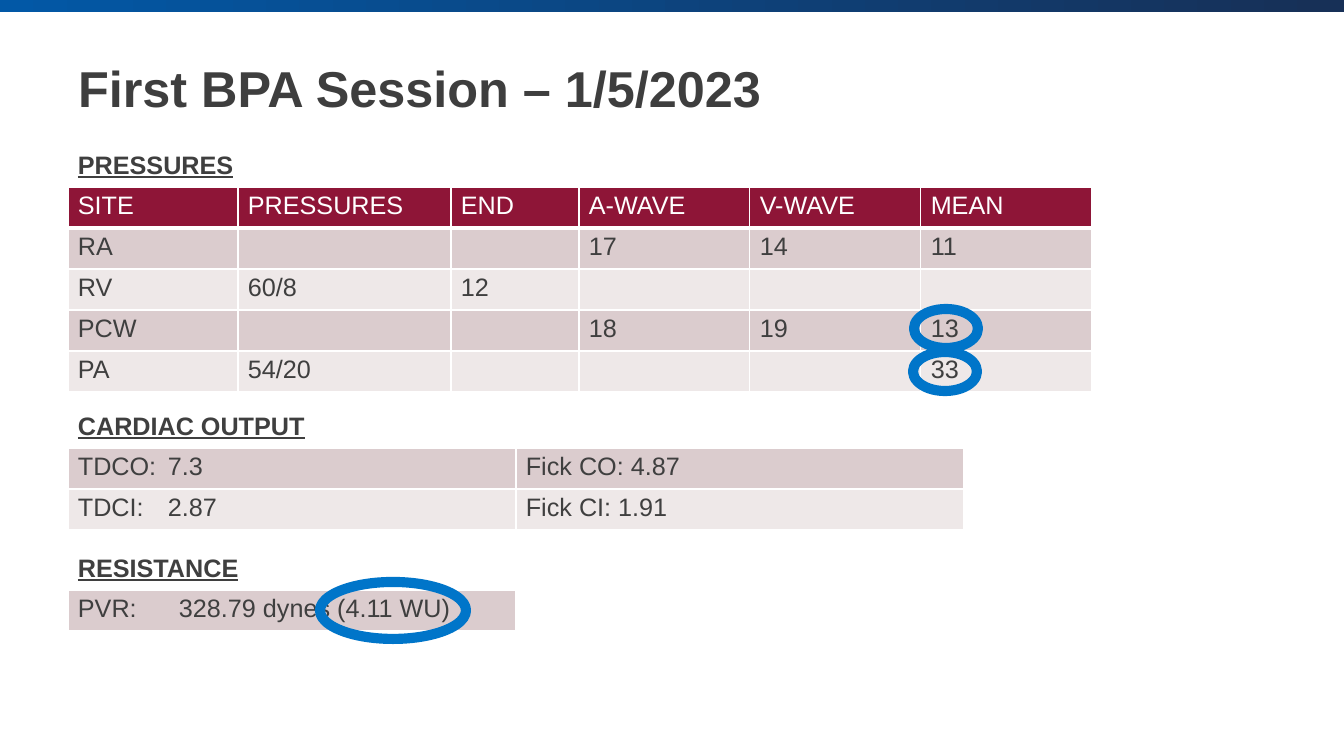
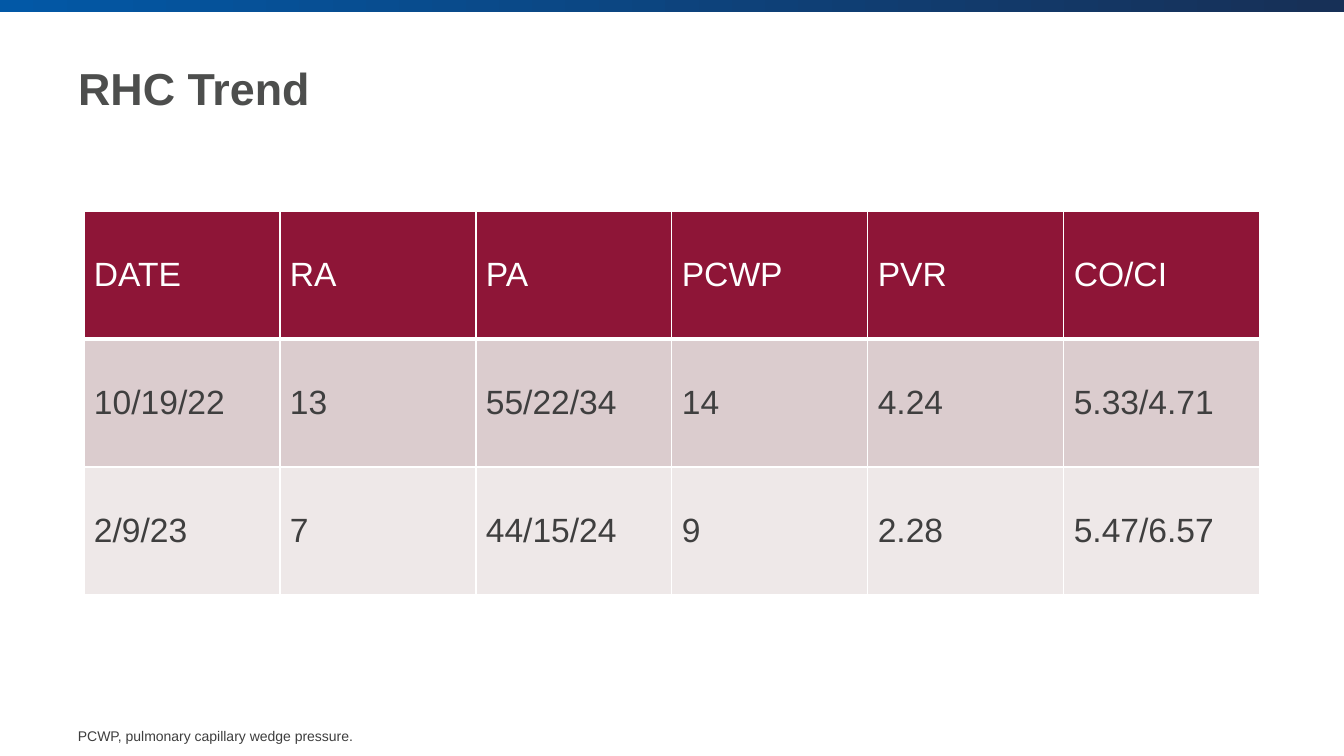
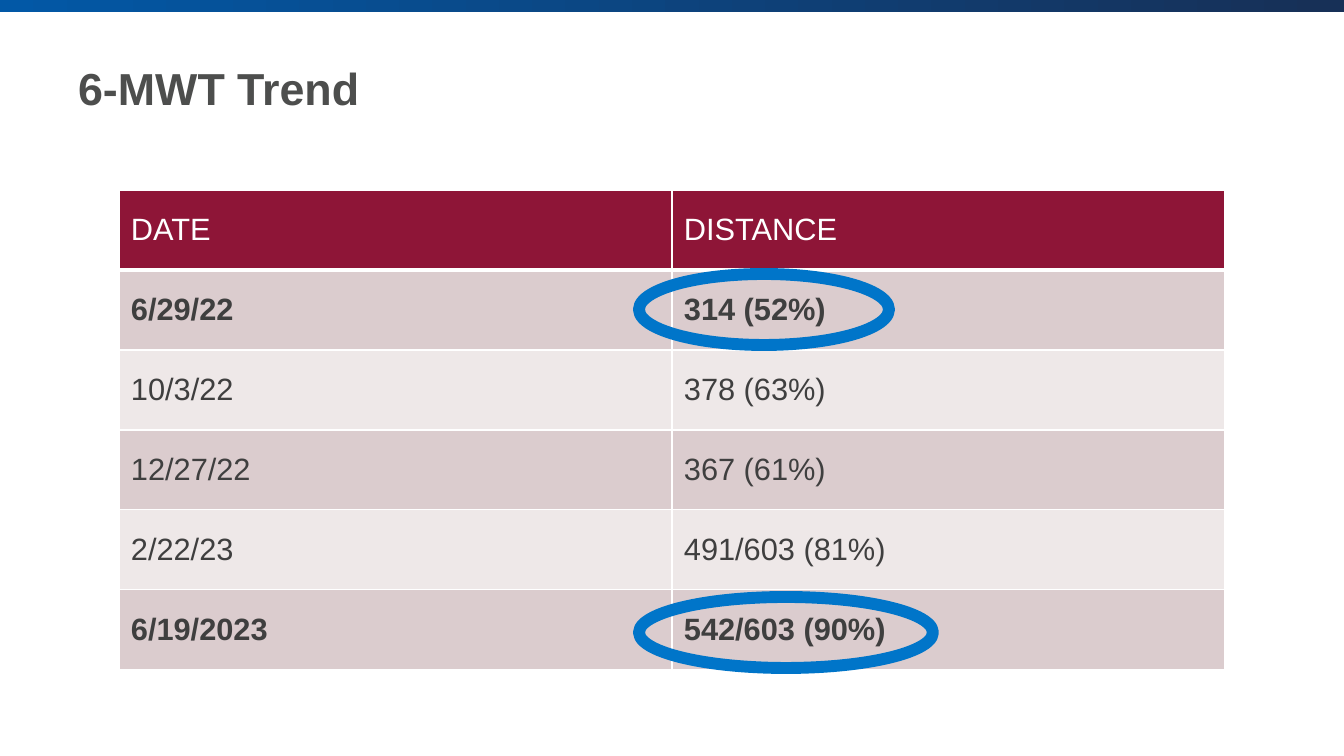
from dataclasses import dataclass

from lxml.etree import SubElement
from pptx import Presentation
from pptx.dml.color import RGBColor
from pptx.enum.shapes import MSO_SHAPE
from pptx.enum.text import MSO_ANCHOR, PP_ALIGN
from pptx.oxml.ns import qn
from pptx.util import Emu, Pt

EMU_PER_PX = 914400 / 100.8


def px(length):
    return Emu(round(length * EMU_PER_PX))


@dataclass(frozen=True)
class Theme:
    font: str = "Arial"
    band_start: str = "0258A6"
    band_end: str = "173057"
    title: str = "3E3E3E"
    trend_title: str = "4D4E4D"
    text: str = "3F3F3F"
    white: str = "FFFFFF"
    header: str = "8E1537"
    stripes: tuple = ("DBCCCE", "EEE8E8")
    ring: str = "0075C9"
    title_size: int = 36
    trend_title_size: int = 32
    body_size: int = 18
    distance_size: int = 22
    trend_size: int = 24
    footnote_size: int = 10


THEME = Theme()


@dataclass(frozen=True)
class Box:
    left: int
    top: int
    width: int
    height: int

    def inner(self, left, top, width, height):
        """Return a box whose corner is offset from this one's corner."""
        return Box(self.left + left, self.top + top, width, height)

    def emu(self):
        return [px(length) for length in (self.left, self.top, self.width, self.height)]


SLIDE = Box(0, 0, 1344, 756)
TITLE = Box(68, 22, 1184, 131)
FOOTNOTE = Box(68, 701, 1184, 48)
BAND_HEIGHT = 12


def rgb(value):
    return RGBColor.from_string(value)


def format_runs(paragraph, size, color, bold=False, underline=False):
    for run in paragraph.runs:
        font = run.font
        font.name = THEME.font
        font.size = Pt(size)
        font.bold = bold
        font.underline = underline
        font.color.rgb = rgb(color)


def set_up_layout(presentation):
    """Place the title on the shared layout and return that layout."""
    layout = presentation.slide_layouts.get_by_name("Title Only")
    title = next(iter(layout.placeholders))
    title.left, title.top, title.width, title.height = TITLE.emu()
    title.text_frame.vertical_anchor = MSO_ANCHOR.MIDDLE
    return layout


def add_master_band(presentation, slide):
    """Draw the gradient band and move it to the master, behind every slide."""
    box = SLIDE.inner(0, 0, SLIDE.width, BAND_HEIGHT)
    band = slide.shapes.add_shape(MSO_SHAPE.RECTANGLE, *box.emu())
    band.shadow.inherit = False
    band.line.fill.background()
    band.fill.gradient()
    band.fill.gradient_angle = 0
    colors = ((0, THEME.band_start), (0.99, THEME.band_end))
    for stop, (position, color) in zip(band.fill.gradient_stops, colors):
        stop.position = position
        stop.color.rgb = rgb(color)
    presentation.slide_master.shapes.element.append(band.element)


def add_titled_slide(presentation, layout, title, size, color):
    slide = presentation.slides.add_slide(layout)
    slide.shapes.title.text_frame.text = title
    paragraph = slide.shapes.title.text_frame.paragraphs[0]
    paragraph.alignment = PP_ALIGN.LEFT
    format_runs(paragraph, size, color, bold=True)
    return slide


def add_text(slide, box, text, size, color, anchor=MSO_ANCHOR.TOP, **style):
    frame = slide.shapes.add_textbox(*box.emu()).text_frame
    frame.word_wrap = True
    frame.vertical_anchor = anchor
    frame.text = text
    format_runs(frame.paragraphs[0], size, color, **style)


def set_borders(cell, bottom_width):
    properties = cell._tc.get_or_add_tcPr()
    widths = {"a:lnL": 1, "a:lnR": 1, "a:lnT": 1, "a:lnB": bottom_width}
    for index, (tag, width) in enumerate(widths.items()):
        line = SubElement(properties, qn(tag), w=str(Pt(width)))
        fill = SubElement(line, qn("a:solidFill"))
        SubElement(fill, qn("a:srgbClr"), val=THEME.white)
        properties.insert(index, line)


def add_tab_stop(paragraph, position):
    tabs = SubElement(paragraph._p.get_or_add_pPr(), qn("a:tabLst"))
    SubElement(tabs, qn("a:tab"), pos=str(px(position)), algn="l")


def add_table(slide, left, top, columns, row_height, rows, size, header=True,
              anchor=MSO_ANCHOR.TOP, margins=(10, 5), bold_rows=(), tab=None):
    """Add a striped table and return its box."""
    box = Box(left, top, sum(columns), row_height * len(rows))
    table = slide.shapes.add_table(len(rows), len(columns), *box.emu()).table
    table.first_row = header
    table.horz_banding = False
    for column, width in zip(table.columns, columns):
        column.width = px(width)
    for row_index, values in enumerate(rows):
        table.rows[row_index].height = px(row_height)
        is_header = header and row_index == 0
        stripe = THEME.stripes[(row_index - header) % 2]
        for column_index, value in enumerate(values):
            cell = table.cell(row_index, column_index)
            cell.text_frame.text = value
            cell.vertical_anchor = anchor
            cell.margin_left = cell.margin_right = px(margins[0])
            cell.margin_top = cell.margin_bottom = px(margins[1])
            cell.fill.solid()
            cell.fill.fore_color.rgb = rgb(THEME.header if is_header else stripe)
            set_borders(cell, 3 if is_header else 1)
            paragraph = cell.text_frame.paragraphs[0]
            if "\t" in value:
                add_tab_stop(paragraph, tab)
            format_runs(paragraph, size, THEME.white if is_header else THEME.text,
                        bold=row_index in bold_rows)
    return box


def add_ring(slide, box, line_width):
    ring = slide.shapes.add_shape(MSO_SHAPE.OVAL, *box.emu())
    ring.shadow.inherit = False
    ring.fill.background()
    ring.line.color.rgb = rgb(THEME.ring)
    ring.line.width = Pt(line_width)


def add_measurements(slide, top, heading, columns, rows, rings=(), **options):
    """Add an underlined heading, its table and the rings on the table."""
    left, heading_height, table_offset, row_height = 68, 40, 43, 41
    add_text(slide, Box(left, top, 672, heading_height), heading, THEME.body_size,
             THEME.text, bold=True, underline=True)
    box = add_table(slide, left, top + table_offset, columns, row_height, rows,
                    THEME.body_size, **options)
    for ring in rings:
        add_ring(slide, box.inner(*ring), 7.25)


def fill_session(slide):
    add_measurements(
        slide, 144, "PRESSURES", [170, 213, 128, 171, 171, 171],
        [["SITE", "PRESSURES", "END", "A-WAVE", "V-WAVE", "MEAN"],
         ["RA", "", "", "17", "14", "11"],
         ["RV", "60/8", "12", "", "", ""],
         ["PCW", "", "", "18", "19", "13"],
         ["PA", "54/20", "", "", "", "33"]],
        rings=[(846, 122, 64, 39), (845, 165, 64, 39)])
    add_measurements(
        slide, 405, "CARDIAC OUTPUT", [448, 448],
        [["TDCO:\t7.3", "Fick CO: 4.87"], ["TDCI:\t2.87", "Fick CI: 1.91"]],
        header=False, tab=90)
    add_measurements(
        slide, 547, "RESISTANCE", [448], [["PVR:\t328.79 dynes (4.11 WU)"]],
        rings=[(252, -8, 146, 57)], header=False, tab=101)


def fill_catheter_trend(slide):
    add_table(
        slide, 84, 211, [196] * 6, 128,
        [["DATE", "RA", "PA", "PCWP", "PVR", "CO/CI"],
         ["10/19/22", "13", "55/22/34", "14", "4.24", "5.33/4.71"],
         ["2/9/23", "7", "44/15/24", "9", "2.28", "5.47/6.57"]],
        THEME.trend_size, anchor=MSO_ANCHOR.MIDDLE)
    add_text(slide, FOOTNOTE, "PCWP, pulmonary capillary wedge pressure.",
             THEME.footnote_size, THEME.title, anchor=MSO_ANCHOR.BOTTOM)


def fill_walk_trend(slide):
    box = add_table(
        slide, 119, 190, [553] * 2, 80,
        [["DATE", "DISTANCE"],
         ["6/29/22", "314 (52%)"],
         ["10/3/22", "378 (63%)"],
         ["12/27/22", "367 (61%)"],
         ["2/22/23", "491/603 (81%)"],
         ["6/19/2023", "542/603 (90%)"]],
        THEME.distance_size, anchor=MSO_ANCHOR.MIDDLE, margins=(12, 6),
        bold_rows=(1, 5))
    for top, width in ((84, 250), (407, 294)):
        add_ring(slide, box.inner(520, top, width, 71), 8.5)


def main():
    presentation = Presentation()
    presentation.slide_width = px(SLIDE.width)
    presentation.slide_height = px(SLIDE.height)
    layout = set_up_layout(presentation)

    session = add_titled_slide(presentation, layout, "First BPA Session – 1/5/2023",
                               THEME.title_size, THEME.title)
    add_master_band(presentation, session)
    fill_session(session)
    for title, fill_slide in (("RHC Trend", fill_catheter_trend),
                              ("6-MWT Trend", fill_walk_trend)):
        fill_slide(add_titled_slide(presentation, layout, title,
                                    THEME.trend_title_size, THEME.trend_title))
    presentation.save("out.pptx")


if __name__ == "__main__":
    main()
